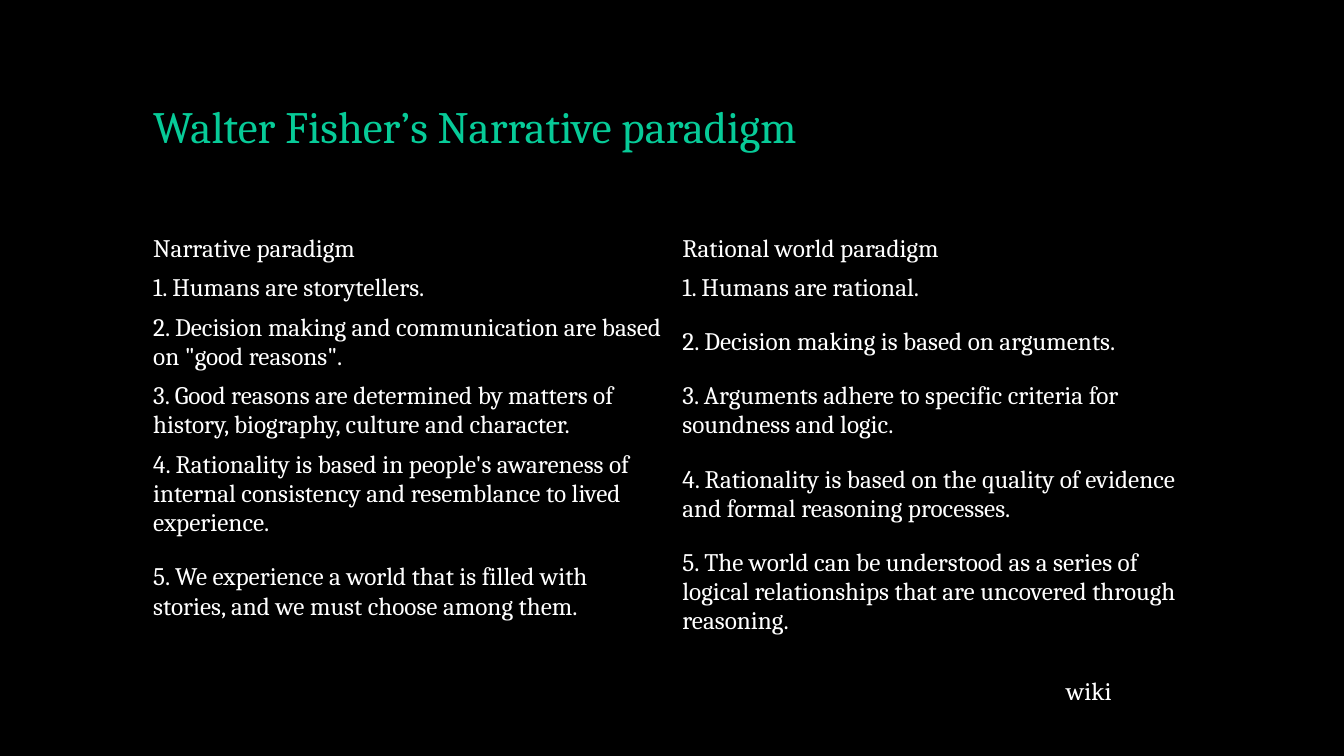
from pptx import Presentation
from pptx.dml.color import RGBColor
from pptx.enum.text import MSO_ANCHOR
from pptx.oxml.ns import qn
from pptx.util import Pt

BOTTOM, MIDDLE, TOP = MSO_ANCHOR.BOTTOM, MSO_ANCHOR.MIDDLE, MSO_ANCHOR.TOP
FONT = "Cambria"
BLACK, GREEN, WHITE = "000000", "07CB98", "FFFFFF"
PLAIN = "{2D5ABB26-0587-4C30-8999-92F81FD0307C}"  # table style without grid
LEFT, WIDTH = 102.24, 756


def paint(fill, color):
    fill.solid()
    fill.fore_color.rgb = RGBColor.from_string(color)


def write(frame, text, size=18, color=WHITE, anchor=TOP, spacing=None):
    frame.word_wrap = True
    frame.vertical_anchor = anchor
    para = frame.paragraphs[0]
    para.line_spacing = spacing
    run = para.add_run()
    run.text = text
    run.font.name = FONT
    run.font.size = Pt(size)
    paint(run.font.fill, color)


deck = Presentation()
deck.slide_width, deck.slide_height = Pt(960), Pt(540)
slide = deck.slides.add_slide(deck.slide_layouts[5])
paint(slide.background.fill, BLACK)

# Title
title = slide.shapes.title
title.left, title.top = Pt(LEFT), Pt(28.8)
title.width, title.height = Pt(WIDTH), Pt(84.24)
write(title.text_frame, "Walter Fisher’s Narrative paradigm",
      size=32, color=GREEN, anchor=BOTTOM, spacing=0.9)
title.text_frame.paragraphs[0].alignment = 1

# Comparison table: row height follows the number of text lines
rows = [
    (1, "Narrative paradigm", "Rational world paradigm"),
    (1, "1. Humans are storytellers.", "1. Humans are rational."),
    (2, "2. Decision making and communication are based on \"good reasons\".",
     "2. Decision making is based on arguments."),
    (2, "3. Good reasons are determined by matters of history, biography, "
        "culture and character.",
     "3. Arguments adhere to specific criteria for soundness and logic."),
    (3, "4. Rationality is based in people's awareness of internal "
        "consistency and resemblance to lived experience.",
     "4. Rationality is based on the quality of evidence and formal "
     "reasoning processes."),
    (3, "5. We experience a world that is filled with stories, and we must "
        "choose among them.",
     "5. The world can be understood as a series of logical relationships "
     "that are uncovered through reasoning."),
]
heights = [7 + 21 * lines for lines, *_ in rows]
holder = slide.shapes.add_table(len(rows), 2, Pt(LEFT), Pt(164.16),
                                Pt(WIDTH), Pt(sum(heights)))
for style in holder._element.iter(qn("a:tableStyleId")):
    style.text = PLAIN
table = holder.table
table.first_row = table.horz_banding = False
for r, (lines, *texts) in enumerate(rows):
    table.rows[r].height = Pt(heights[r])
    for c, text in enumerate(texts):
        cell = table.cell(r, c)
        cell.fill.background()
        cell.vertical_anchor = MIDDLE
        write(cell.text_frame, text, anchor=None)

# Source note
note = slide.shapes.add_textbox(Pt(754.56), Pt(478.8), Pt(62.64), Pt(28.8))
write(note.text_frame, "wiki")

deck.save("out.pptx")
